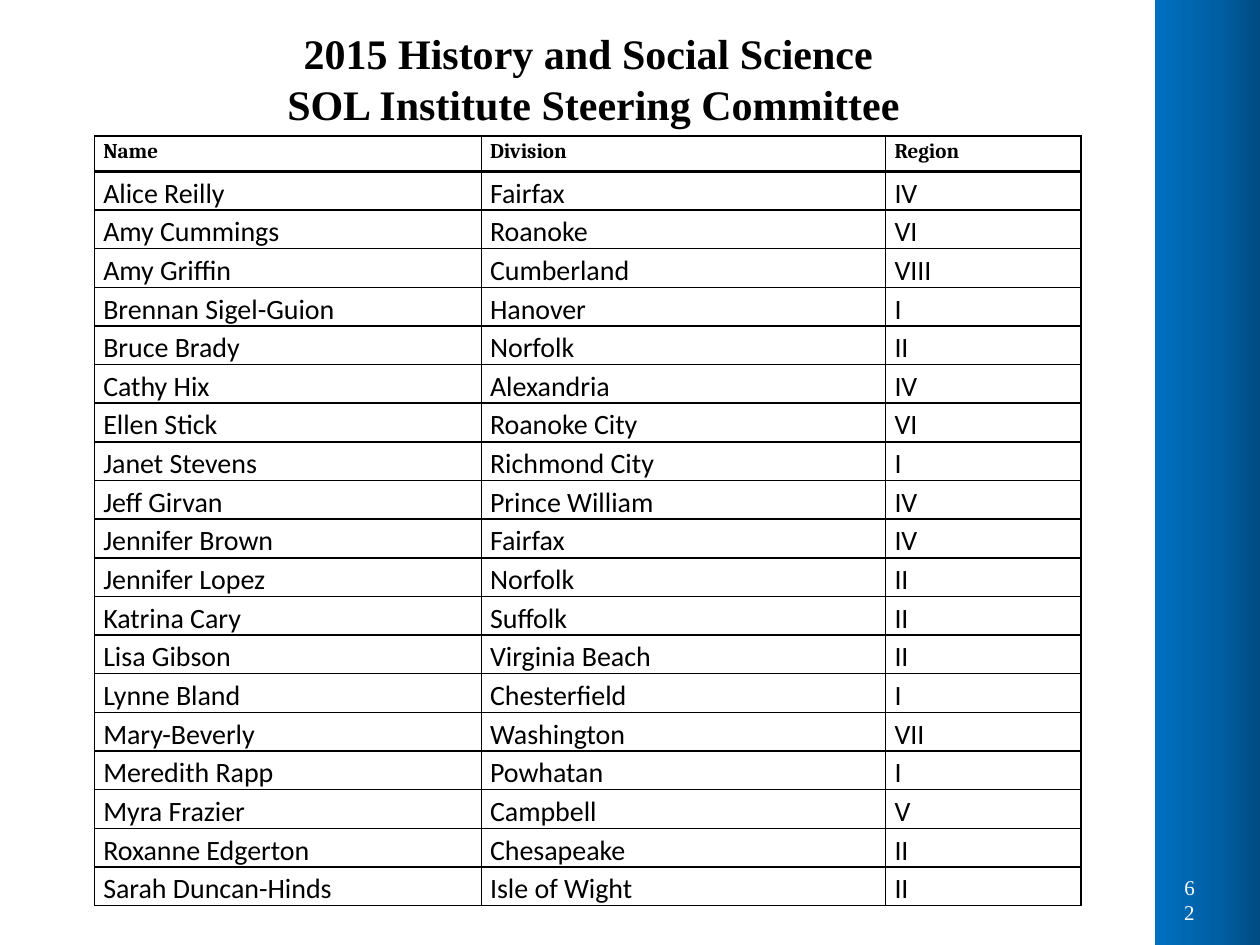
import copy

import pptx
import pptx.dml.color
import pptx.enum.shapes
import pptx.enum.text
import pptx.oxml
import pptx.oxml.ns
import pptx.util
from pptx.util import Inches

TITLE_LINES = ["2015 History and Social Science ", "SOL Institute Steering Committee"]
PAGE_NUMBER = "62"
HEADINGS = ("Name", "Division", "Region")
MEMBERS = [
    ("Alice Reilly", "Fairfax", "IV"),
    ("Amy Cummings", "Roanoke", "VI"),
    ("Amy Griffin", "Cumberland", "VIII"),
    ("Brennan Sigel-Guion", "Hanover", "I"),
    ("Bruce Brady", "Norfolk", "II"),
    ("Cathy Hix", "Alexandria", "IV"),
    ("Ellen Stick", "Roanoke City", "VI"),
    ("Janet Stevens", "Richmond City", "I"),
    ("Jeff Girvan", "Prince William", "IV"),
    ("Jennifer Brown", "Fairfax", "IV"),
    ("Jennifer Lopez", "Norfolk", "II"),
    ("Katrina Cary", "Suffolk", "II"),
    ("Lisa Gibson", "Virginia Beach", "II"),
    ("Lynne Bland", "Chesterfield", "I"),
    ("Mary-Beverly", "Washington", "VII"),
    ("Meredith Rapp", "Powhatan", "I"),
    ("Myra Frazier", "Campbell", "V"),
    ("Roxanne Edgerton", "Chesapeake", "II"),
    ("Sarah Duncan-Hinds", "Isle of Wight", "II"),
]
COLUMN_WIDTHS = (3.07, 3.21, 1.55)
HEADING_HEIGHT, MEMBER_HEIGHT, TABLE_HEIGHT = 0.28, 0.26, 6.11
BAND_STOPS = [(0, "004272"), (0.5, "005EA2"), (1, "0070C0")]
THIN, THICK = 1, 2.25

TITLE_FONT = {"name": "Times New Roman", "size": 24, "bold": True, "color": "000000"}
NUMBER_FONT = {"name": "Times New Roman", "size": 12, "bold": False, "color": "FFFFFF"}
HEADING_FONT = {"name": "Cambria", "size": 12, "bold": True, "color": "000000"}
MEMBER_FONT = {"name": "Calibri", "size": 16, "bold": False, "color": "000000"}
TITLE_MARGINS = dict.fromkeys(
    ("margin_left", "margin_top", "margin_right", "margin_bottom"), Inches(0.05))
CELL_FORMAT = {"margin_left": Inches(0.07), "margin_right": Inches(0.07),
               "margin_top": 0, "margin_bottom": 0}


def rgb(hex_color):
    return pptx.dml.color.RGBColor.from_string(hex_color)


def set_attributes(target, values):
    for attribute, value in values.items():
        setattr(target, attribute, value)


def write(paragraph, text, font, **paragraph_format):
    run = paragraph.add_run()
    run.text = text
    set_attributes(paragraph, paragraph_format)
    set_attributes(run.font, {"name": font["name"], "bold": font["bold"],
                              "size": pptx.util.Pt(font["size"])})
    run.font.color.rgb = rgb(font["color"])


def set_borders(cell, widths):
    """Draw black lines; widths maps a side (L, R, T, B) to points."""
    properties = cell._tc.get_or_add_tcPr()
    for position, (side, width) in enumerate(widths.items()):
        properties.insert(position, pptx.oxml.parse_xml(
            f'<a:ln{side} {pptx.oxml.ns.nsdecls("a")} w="{pptx.util.Pt(width)}">'
            '<a:solidFill><a:srgbClr val="000000"/></a:solidFill>'
            f'</a:ln{side}>'))


def add_side_band(slide):
    band = slide.shapes.add_shape(
        pptx.enum.shapes.MSO_SHAPE.RECTANGLE,
        Inches(5.92), Inches(3.25), Inches(7.5), Inches(1))
    band.rotation = 270
    band.shadow.inherit = False
    band.line.fill.background()
    band.fill.gradient()
    band.fill.gradient_angle = 90
    first_stop = band.element.xpath(".//a:gs")[0]
    first_stop.addnext(copy.deepcopy(first_stop))
    for stop, (position, color) in zip(band.fill.gradient_stops, BAND_STOPS):
        stop.position = position
        stop.color.rgb = rgb(color)


def add_page_number(slide):
    number = slide.shapes.add_textbox(
        Inches(9.3), Inches(6.99), Inches(0.28), Inches(0.3)).text_frame
    number.word_wrap = True
    number.vertical_anchor = pptx.enum.text.MSO_ANCHOR.MIDDLE
    write(number.paragraphs[0], PAGE_NUMBER, NUMBER_FONT,
          alignment=pptx.enum.text.PP_ALIGN.RIGHT)


def add_title(slide):
    title = slide.shapes.add_textbox(
        Inches(0.5), Inches(0.17), Inches(8.42), Inches(0.91)).text_frame
    title.word_wrap = True
    set_attributes(title, TITLE_MARGINS)
    title.add_paragraph()
    for paragraph, line in zip(title.paragraphs, TITLE_LINES):
        write(paragraph, line, TITLE_FONT, alignment=pptx.enum.text.PP_ALIGN.CENTER)


def add_committee(slide):
    rows = [HEADINGS] + MEMBERS
    frame = slide.shapes.add_table(
        len(rows), len(HEADINGS), Inches(0.75), Inches(1.08),
        Inches(sum(COLUMN_WIDTHS)), Inches(TABLE_HEIGHT))
    committee = frame.table
    committee.first_row = committee.horz_banding = False
    for column, width in zip(committee.columns, COLUMN_WIDTHS):
        column.width = Inches(width)
    for r, row in enumerate(rows):
        committee.rows[r].height = Inches(MEMBER_HEIGHT if r else HEADING_HEIGHT)
        borders = {"L": THIN, "R": THIN, "T": THICK if r == 1 else THIN,
                   "B": THICK if r == 0 else THIN}
        for c, text in enumerate(row):
            cell = committee.cell(r, c)
            set_attributes(cell, CELL_FORMAT)
            cell.fill.solid()
            cell.fill.fore_color.rgb = rgb("FFFFFF")
            set_borders(cell, borders)
            write(cell.text_frame.paragraphs[0], text,
                  MEMBER_FONT if r else HEADING_FONT, line_spacing=1.15)
    frame.height = Inches(TABLE_HEIGHT)


def main():
    deck = pptx.Presentation()
    deck.slide_width, deck.slide_height = Inches(10), Inches(7.5)
    slide = deck.slides.add_slide(deck.slide_layouts[6])
    add_side_band(slide)
    add_page_number(slide)
    add_title(slide)
    add_committee(slide)
    deck.save("out.pptx")


if __name__ == "__main__":
    main()
